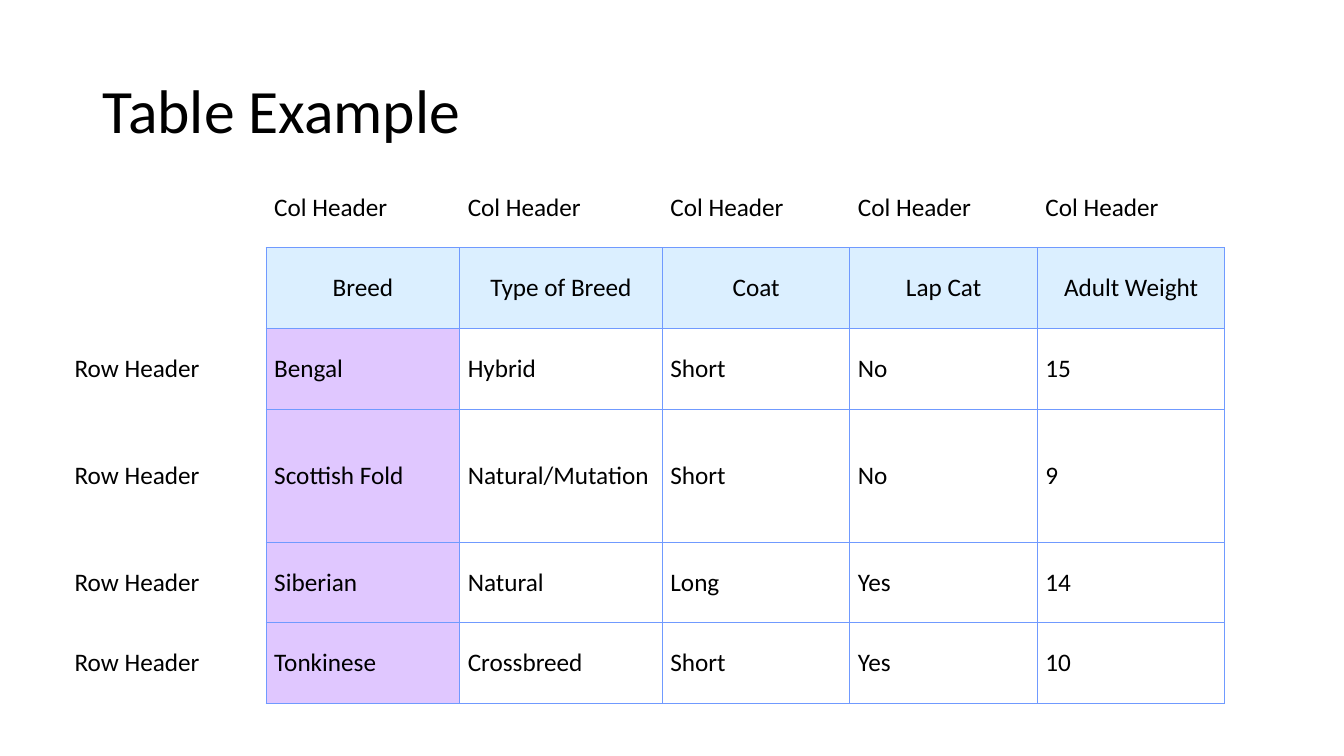
from pptx import Presentation
from pptx.dml.color import RGBColor
from pptx.enum.text import MSO_ANCHOR, MSO_AUTO_SIZE, PP_ALIGN
from pptx.oxml import parse_xml
from pptx.oxml.ns import nsdecls
from pptx.util import Inches, Pt

BLACK = RGBColor(0x00, 0x00, 0x00)
BORDER = RGBColor(0x70, 0x9A, 0xFF)
BLUE = RGBColor(0xDB, 0xEF, 0xFF)
PURPLE = RGBColor(0xE0, 0xC7, 0xFF)

WIDTHS = [1.98, 1.92, 2.01, 1.86, 1.86, 1.86]
HEIGHTS = [0.8, 0.8, 0.8, 1.32, 0.8, 0.8]
HEADS = ["Breed", "Type of Breed", "Coat", "Lap Cat", "Adult Weight"]
CATS = [
    ["Bengal", "Hybrid", "Short", "No", "15"],
    ["Scottish Fold", "Natural/Mutation", "Short", "No", "9"],
    ["Siberian", "Natural", "Long", "Yes", "14"],
    ["Tonkinese", "Crossbreed", "Short", "Yes", "10"],
]


def assign(item, values):
    for name, value in values.items():
        setattr(item, name, value)


def write(frame, text, size, align):
    frame.text = text
    para = frame.paragraphs[0]
    para.alignment = align
    assign(para.font, {"name": "Calibri", "size": Pt(size)})
    para.font.color.rgb = BLACK
    return para


def add_title(slide, text):
    title = slide.shapes.title
    assign(title, {"left": Inches(0.92), "top": Inches(0.4),
                   "width": Inches(11.5), "height": Inches(1.45)})
    frame = title.text_frame
    assign(frame, {"auto_size": MSO_AUTO_SIZE.NONE, "word_wrap": True,
                   "vertical_anchor": MSO_ANCHOR.MIDDLE})
    write(frame, text, 44, PP_ALIGN.LEFT).line_spacing = 0.9


def add_edges(cell, sides):
    props = cell._tc.get_or_add_tcPr()
    for side in "LRTB":
        paint = "<a:noFill/>"
        if side in sides:
            paint = f'<a:solidFill><a:srgbClr val="{BORDER}"/></a:solidFill>'
        props.append(parse_xml(
            f'<a:ln{side} {nsdecls("a")} w="{Pt(0.75)}">{paint}</a:ln{side}>'))


def find_edges(row, col):
    if row and col:
        return "LRTB"
    if row:
        return "R"
    return "B" if col else ""


def find_fill(row, col):
    if row == 1 and col:
        return BLUE
    return PURPLE if row > 1 and col == 1 else None


def format_cell(cell, text, row, col):
    inset = Inches(0.08)
    assign(cell, {"margin_left": inset, "margin_right": inset,
                  "margin_top": inset, "margin_bottom": inset,
                  "vertical_anchor": MSO_ANCHOR.MIDDLE})
    write(cell.text_frame, text, 18,
          PP_ALIGN.CENTER if row == 1 else PP_ALIGN.LEFT)
    add_edges(cell, find_edges(row, col))
    color = find_fill(row, col)
    if color is None:
        cell.fill.background()
    else:
        cell.fill.solid()
        cell.fill.fore_color.rgb = color


def add_grid(slide, rows):
    table = slide.shapes.add_table(
        len(HEIGHTS), len(WIDTHS), Inches(0.66), Inches(1.66),
        Inches(sum(WIDTHS)), Inches(sum(HEIGHTS))).table
    assign(table, {"first_row": False, "horz_banding": False})
    for column, width in zip(table.columns, WIDTHS):
        column.width = Inches(width)
    for line, height in zip(table.rows, HEIGHTS):
        line.height = Inches(height)
    for row, texts in enumerate(rows):
        for col, text in enumerate(texts):
            format_cell(table.cell(row, col), text, row, col)


def main():
    deck = Presentation()
    assign(deck, {"slide_width": Inches(13.33), "slide_height": Inches(7.5)})
    slide = deck.slides.add_slide(deck.slide_layouts[5])
    add_title(slide, "Table Example")
    rows = [[""] + ["Col Header"] * len(HEADS), [""] + HEADS]
    rows += [["Row Header"] + cat for cat in CATS]
    add_grid(slide, rows)
    deck.save("out.pptx")


if __name__ == "__main__":
    main()
